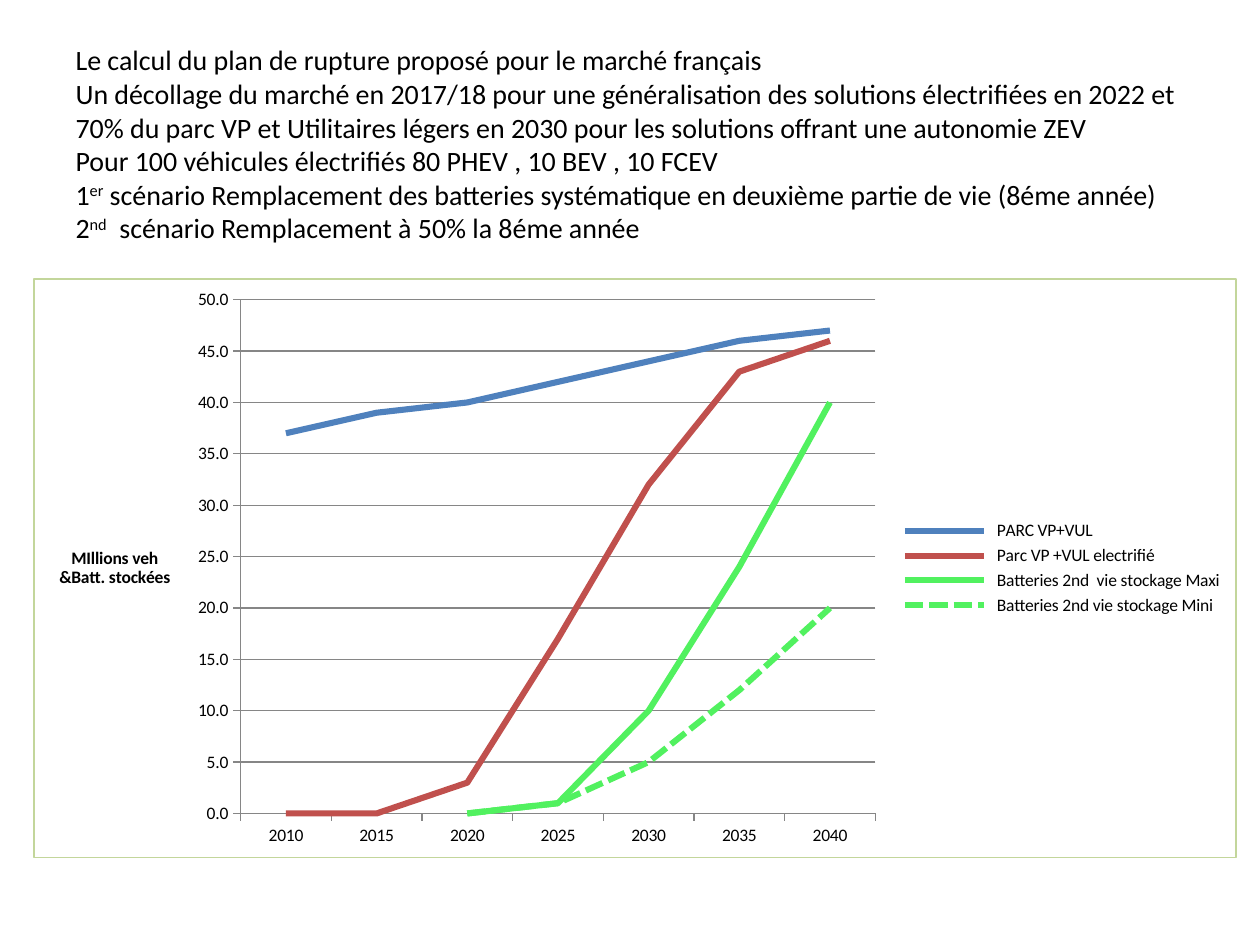
import pptx
import pptx.chart.data
import pptx.dml.color
import pptx.enum.chart
import pptx.enum.dml
import pptx.enum.text
import pptx.oxml
import pptx.oxml.ns
import pptx.util
from dataclasses import dataclass

Cm, Pt = pptx.util.Cm, pptx.util.Pt
qn = pptx.oxml.ns.qn

# Content: title pieces are (text, is superscript); \v is a line break
TITLE = [
    ("Le calcul du plan de rupture proposé pour le marché français\v"
     "Un décollage du marché en 2017/18 pour une généralisation des solutions "
     "électrifiées en 2022 et 70% du parc VP et Utilitaires légers en 2030 "
     "pour les solutions offrant une autonomie ZEV\v"
     "Pour 100 véhicules électrifiés 80 PHEV , 10 BEV , 10 FCEV\v1", False),
    ("er", True),
    (" scénario Remplacement des batteries systématique en deuxième partie "
     "de vie (8éme année)\v2", False),
    ("nd", True),
    ("  scénario Remplacement à 50% la 8éme année", False),
]
YEARS = [str(year) for year in range(2010, 2041, 5)]
AXIS_TITLE = "MIllions veh\n&Batt. stockées"
# Name, values, colour, dashed
SERIES = [
    ("  PARC VP+VUL", [37, 39, 40, 42, 44, 46, 47], "4F81BD", False),
    ("  Parc VP +VUL electrifié", [0, 0, 3, 17, 32, 43, 46], "C0504D", False),
    ("  Batteries 2nd  vie stockage Maxi", [None, None, 0, 1, 10, 24, 40], "51F15F", False),
    ("  Batteries 2nd vie stockage Mini", [None, None, 0, 1, 5, 12, 20], "51F15F", True),
]


@dataclass
class Theme:
    font: str = "Calibri"
    text: str = "000000"
    grid: str = "868686"
    border: str = "C3D69B"
    title_size: int = 16
    chart_size: int = 10
    series_width: float = 3.5


THEME = Theme()


def rgb(value):
    return pptx.dml.color.RGBColor.from_string(value)


def style_font(font, size, bold=False):
    font.name, font.size, font.bold = THEME.font, Pt(size), bold
    font.color.rgb = rgb(THEME.text)


def place(element, index, x, y, w=None, h=None, inner=False):
    """Give a chart part a manual layout, in percent of the chart."""
    for old in element.findall(qn("c:layout")):
        element.remove(old)
    target = '<c:layoutTarget val="inner"/>' if inner else ""
    sizes = [(tag, value) for tag, value in zip("xywh", (x, y, w, h)) if value is not None]
    modes = "".join(f'<c:{tag}Mode val="edge"/>' for tag in "xy")
    values = "".join(f'<c:{tag} val="{value / 100:.4f}"/>' for tag, value in sizes)
    element.insert(index, pptx.oxml.parse_xml(
        f'<c:layout {pptx.oxml.ns.nsdecls("c")}><c:manualLayout>'
        f"{target}{modes}{values}</c:manualLayout></c:layout>"))


def add_title(slide):
    title = slide.shapes.title
    title.left, title.top, title.width, title.height = Cm(1.27), Cm(0.38), Cm(22.86), Cm(5.03)
    frame = title.text_frame
    frame.word_wrap = True
    frame.auto_size = pptx.enum.text.MSO_AUTO_SIZE.NONE
    frame.vertical_anchor = pptx.enum.text.MSO_ANCHOR.MIDDLE
    paragraph = frame.paragraphs[0]
    paragraph.alignment = pptx.enum.text.PP_ALIGN.LEFT
    for text, raised in TITLE:
        for number, line in enumerate(text.split("\v")):
            if number:
                paragraph.add_line_break()
            run = paragraph.add_run()
            run.text = line
            style_font(run.font, THEME.title_size)
            if raised:
                run.font._element.set("baseline", "30000")


def add_fleet_chart(slide):
    data = pptx.chart.data.CategoryChartData(number_format="0.0")
    data.categories = YEARS
    for name, values, _, _ in SERIES:
        data.add_series(name, values)
    chart = slide.shapes.add_chart(
        pptx.enum.chart.XL_CHART_TYPE.LINE,
        Cm(0.67), Cm(5.61), Cm(24.26), Cm(11.69), data).chart
    style_font(chart.font, THEME.chart_size)
    chart.has_title = False
    chart.plots[0].vary_by_categories = False

    # Series lines
    for series, (_, _, colour, dashed) in zip(chart.plots[0].series, SERIES):
        series.smooth = False
        series.marker.style = pptx.enum.chart.XL_MARKER_STYLE.NONE
        series.format.line.width = Pt(THEME.series_width)
        series.format.line.color.rgb = rgb(colour)
        if dashed:
            series.format.line.dash_style = pptx.enum.dml.MSO_LINE.SQUARE_DOT

    # Axes and gridlines
    years, millions = chart.category_axis, chart.value_axis
    millions.minimum_scale, millions.maximum_scale, millions.major_unit = 0, 50, 5
    millions.tick_labels.number_format = "0.0"
    millions.tick_labels.number_format_is_linked = False
    millions.has_major_gridlines = True
    for axis in (years, millions):
        axis.major_tick_mark = pptx.enum.chart.XL_TICK_MARK.OUTSIDE
    for part in (years, millions, millions.major_gridlines):
        part.format.line.color.rgb = rgb(THEME.grid)
        part.format.line.width = Pt(0.75)

    # Axis title, written horizontally
    axis_title = millions.axis_title
    axis_title.text_frame.text = AXIS_TITLE
    for paragraph in axis_title.text_frame.paragraphs:
        paragraph.alignment = pptx.enum.text.PP_ALIGN.CENTER
        for run in paragraph.runs:
            style_font(run.font, THEME.chart_size, bold=True)
    body = axis_title._element.find(".//" + qn("a:bodyPr"))
    body.set("rot", "0")
    body.set("vert", "horz")

    # Legend and layout
    chart.has_legend = True
    chart.legend.position = pptx.enum.chart.XL_LEGEND_POSITION.RIGHT
    chart.legend.include_in_layout = False
    style_font(chart.legend.font, THEME.chart_size)
    place(chart._chartSpace.chart.plotArea, 0, 17.2, 3.6, 52.8, 88.8, inner=True)
    place(axis_title._element, 1, 1.8, 45.5)
    place(chart.legend._element, 1, 71.8, 41, 27.5, 18)

    # Frame around the chart
    chart._chartSpace.chart.addnext(pptx.oxml.parse_xml(
        f'<c:spPr {pptx.oxml.ns.nsdecls("c", "a")}><a:noFill/><a:ln w="{Pt(0.75)}">'
        f'<a:solidFill><a:srgbClr val="{THEME.border}"/></a:solidFill></a:ln></c:spPr>'))


def main():
    deck = pptx.Presentation()
    deck.slide_width, deck.slide_height = Cm(25.4), Cm(19.05)
    slide = deck.slides.add_slide(deck.slide_layouts[5])
    add_title(slide)
    add_fleet_chart(slide)
    deck.save("out.pptx")


if __name__ == "__main__":
    main()
